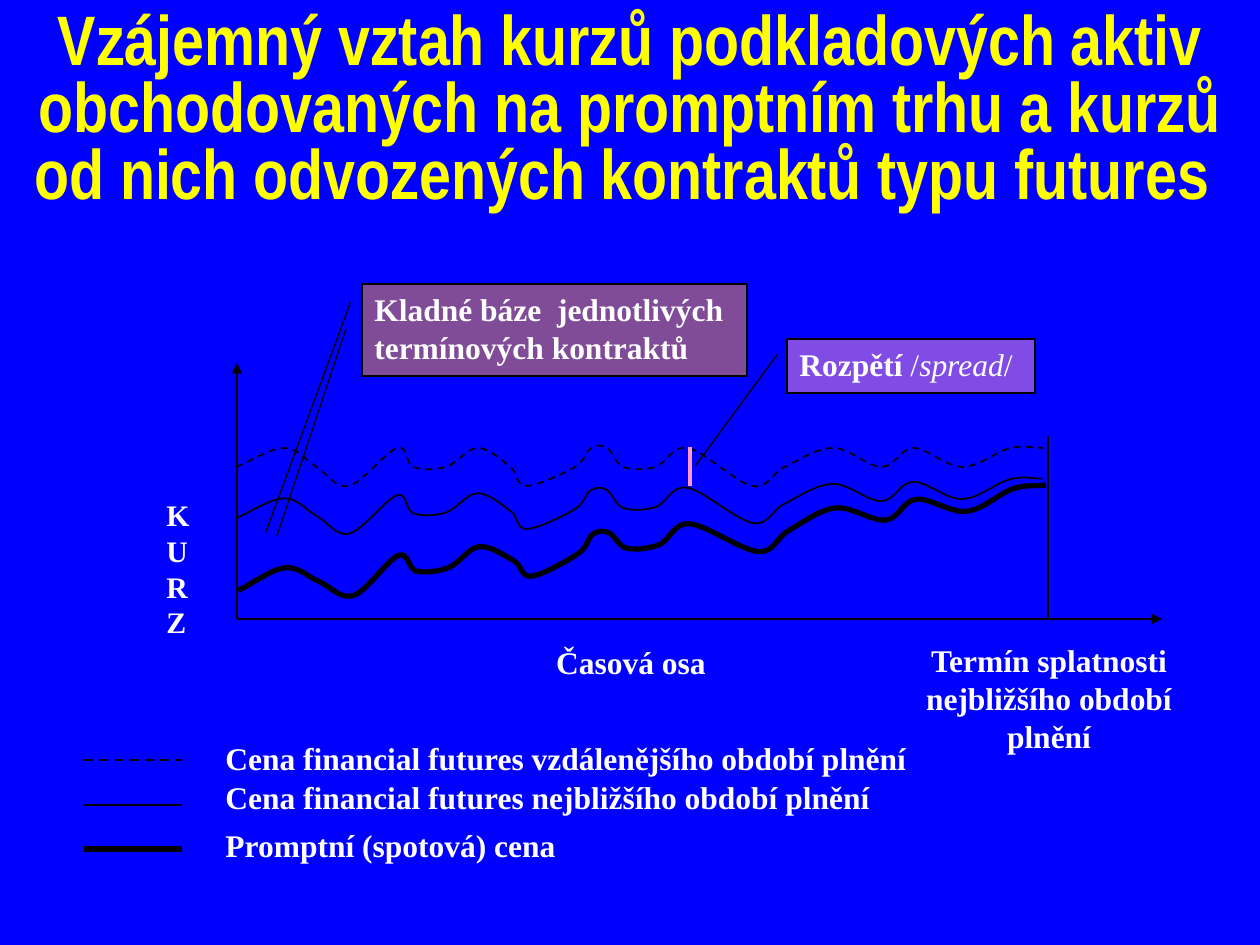
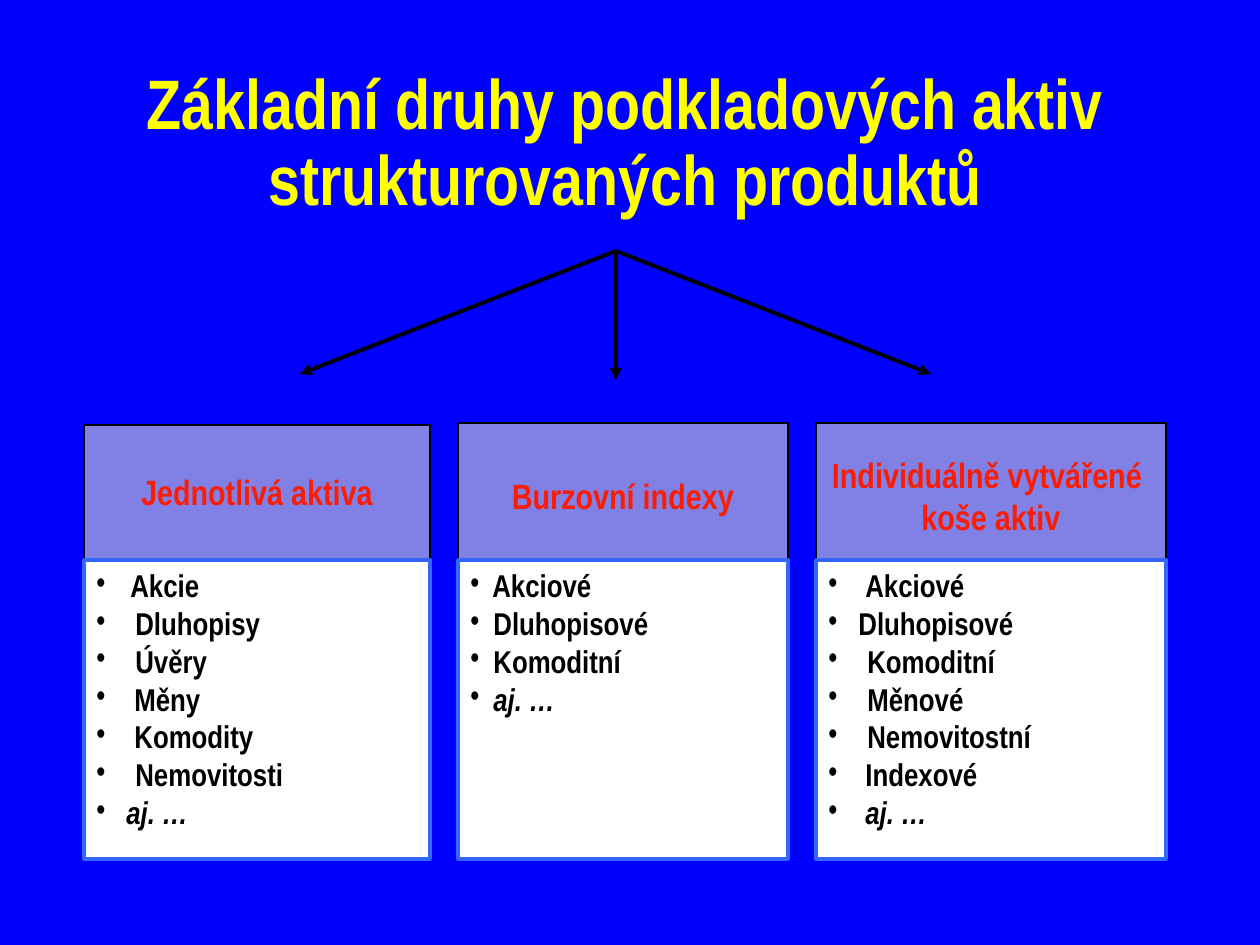
from dataclasses import dataclass

from lxml.etree import SubElement
from pptx import Presentation
from pptx.dml.color import RGBColor
from pptx.enum.dml import MSO_LINE
from pptx.enum.shapes import MSO_CONNECTOR, MSO_SHAPE
from pptx.enum.text import MSO_ANCHOR, MSO_AUTO_SIZE, PP_ALIGN
from pptx.oxml.ns import qn
from pptx.util import Emu, Inches, Pt

PX = Inches(1) / 126


@dataclass(frozen=True)
class Style:
    font: str
    size: int
    color: str
    bold: bool = True


class Theme:
    back, ink, white = "0000FF", "000000", "FFFFFF"
    spread, basis, panel, frame = "FF99CC", "FF9933", "FFFFCC", "3366FF"
    title = Style("Arial Narrow", 40, "FFFF00")
    label = Style("Times New Roman", 18, white)
    axis = Style("Times New Roman", 17, white)
    heading = Style("Arial Narrow", 20, "FC1C04")
    item = Style("Arial Narrow", 18, ink)


# ---- Content: boxes are left, top, width, height in px ----
RATES_TITLE = ["Vzájemný vztah kurzů podkladových aktiv obchodovaných na promptním trhu "
               "a kurzů od nich odvozených kontraktů typu futures "]
ASSETS_TITLE = ["Základní druhy podkladových aktiv", "strukturovaných produktů"]

# Wave knots: (steps along the time axis, level: 1 high, 0 middle, -1 low)
WAVE = [(0, 0), (3, 1), (5, 0), (7, -1), (10, 1), (11, 0), (13, 0), (15, 1),
        (17, 0), (18, -1), (21, 0), (22, 1), (23, 1), (24, 0), (26, 0), (28, 1),
        (32, -1), (34, 0), (37, 1), (40, 0), (42, 1), (45, 0), (48, 1), (50, 1)]
WAVE_STEP, WAVE_LEVEL = 16, 19

# Name, wave box, rotation, curve width, legend width, dash, legend line y
PRICES = [
    ("Cena financial futures vzdálenějšího období plnění",
     (236, 448, 807, 38), 0, 1, 1.25, MSO_LINE.DASH, 760),
    ("Cena financial futures nejbližšího období plnění",
     (236, 489, 807, 37), -1.5, 1, 1, None, 805),
    ("Promptní (spotová) cena",
     (236, 529, 814, 35), -6.2, 3, 3, None, 849),
]
LEGEND_X = (84, 182)
LEGEND_BOX = (213, 737, 735, 132)

AXIS_LETTERS = ((154, 466, 66, 170), list("KURZ"))
CAPTIONS = [
    ((913, 635, 272, 127), ["Termín splatnosti nejbližšího období", "plnění"]),
    ((525, 637, 212, 57), ["Časová osa"]),
]
CALLOUTS = [
    ((787, 339, 248, 54), Theme.spread, (0.29, -0.04, 2.35, -0.37),
     [[("Rozpětí", True, False), (" /", False, False),
       ("spread", False, True), ("/", False, False)]]),
    ((362, 284, 385, 92), Theme.basis, (0.2, -0.03, 2.7, -0.25),
     ["Kladné báze  jednotlivých termínových kontraktů"]),
]
ORIGIN, AXIS_TOP, AXIS_RIGHT = (237, 619), (237, 363), (1162, 619)

OTHERS = [("aj. …", True, True)]
# Left, width, top, heading offset, heading, items with their indents
GROUPS = [
    (84, 346, 425, 46, ["Jednotlivá aktiva"],
     [("Akcie", 34), ("Dluhopisy", 39), ("Úvěry", 39), ("Měny", 38),
      ("Komodity", 38), ("Nemovitosti", 39), (OTHERS, 30)]),
    (458, 330, 423, 51, ["Burzovní indexy"],
     [("Akciové", 22), ("Dluhopisové", 23), ("Komoditní", 23), (OTHERS, 23)]),
    (816, 350, 423, 30, ["Individuálně vytvářené ", "koše aktiv"],
     [("Akciové", 37), ("Dluhopisové", 30), ("Komoditní", 39), ("Měnové", 39),
      ("Nemovitostní", 39), ("Indexové", 37), (OTHERS, 37)]),
]
LIST_TOP, GROUP_BOTTOM = 560, 859
ARROW_START, ARROW_ENDS = (616, 251), [(300, 374), (931, 374), (616, 380)]


# ---- Helpers ----
def px(*values):
    return [Emu(round(v * PX)) for v in values]


def rgb(color):
    return RGBColor.from_string(color)


def write(sp, paragraphs, style, align=PP_ALIGN.LEFT, anchor=MSO_ANCHOR.TOP,
          spacing=None, top=None):
    """Fill a shape; a paragraph is a string or a list of (text, bold, italic)."""
    tf = sp.text_frame
    tf.word_wrap, tf.auto_size, tf.vertical_anchor = True, MSO_AUTO_SIZE.NONE, anchor
    if top is not None:
        tf.margin_top = px(top)[0]
    for i, content in enumerate(paragraphs):
        p = tf.add_paragraph() if i else tf.paragraphs[0]
        p.alignment = align
        if spacing:
            p.line_spacing = spacing
        p.font.name, p.font.size = style.font, Pt(style.size)
        p.font.bold, p.font.color.rgb = style.bold, rgb(style.color)
        if isinstance(content, str):
            p.add_run().text = content
        else:
            for text, bold, italic in content:
                r = p.add_run()
                r.text, r.font.bold, r.font.italic = text, bold, italic
    return tf


def add_bullet(p, indent):
    pPr = p._p.get_or_add_pPr()
    pPr.set("marL", str(px(indent)[0]))
    pPr.set("indent", str(-px(indent)[0]))
    for tag, attributes in (("a:buFont", {"typeface": Theme.item.font}),
                            ("a:buChar", {"char": "•"})):
        mark = pPr.makeelement(qn(tag), attributes)
        pPr.insert_element_before(mark, "a:tabLst", "a:defRPr", "a:extLst")


def add_text(s, box, paragraphs, style, **options):
    return write(s.shapes.add_textbox(*px(*box)), paragraphs, style, **options)


def add_box(s, kind, box, fill, line, width, alpha=None):
    sp = s.shapes.add_shape(kind, *px(*box))
    sp.shadow.inherit = False
    sp.fill.solid()
    sp.fill.fore_color.rgb = rgb(fill)
    if alpha:
        clr = sp._element.spPr.find(f"{qn('a:solidFill')}/{qn('a:srgbClr')}")
        SubElement(clr, qn("a:alpha"), val=str(alpha * 1000))
    sp.line.color.rgb, sp.line.width = rgb(line), Pt(width)
    return sp


def add_line(s, start, end, width=1, color=Theme.ink, dash=None, arrow=False):
    c = s.shapes.add_connector(MSO_CONNECTOR.STRAIGHT, *px(*start, *end))
    c.line.color.rgb, c.line.width = rgb(color), Pt(width)
    if dash:
        c.line.dash_style = dash
    if arrow:
        SubElement(c.line._get_or_add_ln(), qn("a:tailEnd"), type="triangle")
    SubElement(c._element.spPr, qn("a:effectLst"))


def smooth(sp):
    """Turn the straight segments of a freeform into Bezier curves through its knots."""
    knots = [(int(pt.get("x")), int(pt.get("y"))) for pt in sp._element.iter(qn("a:pt"))]

    def mirror(end, inner):
        return tuple(2 * e - i for e, i in zip(end, inner))

    padded = [mirror(knots[0], knots[1]), *knots, mirror(knots[-1], knots[-2])]
    segments = list(sp._element.iter(qn("a:lnTo")))
    for segment, a, b, c, d in zip(segments, padded, padded[1:], padded[2:], padded[3:]):
        leave = [q + (r - p) / 6 for p, q, r in zip(a, b, c)]
        arrive = [r - (u - q) / 6 for q, r, u in zip(b, c, d)]
        curve = segment.makeelement(qn("a:cubicBezTo"), {})
        for x, y in (leave, arrive, c):
            SubElement(curve, qn("a:pt"), x=str(round(x)), y=str(round(y)))
        segment.getparent().replace(segment, curve)


def add_wave(s, box, rotation, width, dash):
    points = [px(n * WAVE_STEP, -level * WAVE_LEVEL) for n, level in WAVE]
    builder = s.shapes.build_freeform(*points[0])
    builder.add_line_segments(points[1:], close=False)
    sp = builder.convert_to_shape()
    smooth(sp)
    sp.left, sp.top, sp.width, sp.height = px(*box)
    sp.rotation = rotation
    sp.shadow.inherit = False
    sp.fill.background()
    sp.line.color.rgb, sp.line.width = rgb(Theme.ink), Pt(width)
    if dash:
        sp.line.dash_style = dash


def add_slide(prs, title, box, spacing):
    s = prs.slides.add_slide(prs.slide_layouts[5])
    sp = s.shapes.title
    sp.left, sp.top, sp.width, sp.height = px(*box)
    write(sp, title, Theme.title, PP_ALIGN.CENTER, MSO_ANCHOR.MIDDLE, spacing)
    return s


# ---- Slides ----
def build_rates(prs):
    s = add_slide(prs, RATES_TITLE, (0, 0, 1260, 224), 0.8)

    # Legend
    tf = add_text(s, LEGEND_BOX, [price[0] for price in PRICES], Theme.label, spacing=0.9)
    for p in tf.paragraphs[1:]:
        p.space_before, p.space_after = Pt(3), Pt(5)

    # Axes and maturity line
    add_line(s, ORIGIN, AXIS_TOP, arrow=True)
    add_line(s, ORIGIN, AXIS_RIGHT, arrow=True)
    add_line(s, (1048, 436), (1048, 619))

    # Price curves with their legend lines
    for _, box, rotation, width, legend_width, dash, y in PRICES:
        add_wave(s, box, rotation, width, dash)
        add_line(s, (LEGEND_X[0], y), (LEGEND_X[1], y), legend_width, dash=dash)

    # Labels
    add_text(s, *AXIS_LETTERS, Theme.axis, top=31)
    for box, lines in CAPTIONS:
        add_text(s, box, lines, Theme.label, align=PP_ALIGN.CENTER)

    # Callouts, spread mark and second pointer
    for box, fill, adjustments, lines in CALLOUTS:
        sp = add_box(s, MSO_SHAPE.LINE_CALLOUT_1, box, fill, Theme.ink, 0.75, alpha=50)
        for i, value in enumerate(adjustments):
            sp.adjustments[i] = value
        write(sp, lines, Theme.label)
    add_line(s, (690, 447), (690, 486), 2.25, Theme.spread)
    add_line(s, (277, 536), (346, 329), 0.75)


def build_assets(prs):
    s = add_slide(prs, ASSETS_TITLE, (124, 46, 1002, 198), 0.9)
    for end in ARROW_ENDS:
        add_line(s, ARROW_START, end, 2.25, arrow=True)

    # Heading panel with its list in front
    for left, width, top, offset, heading, items in GROUPS:
        panel = add_box(s, MSO_SHAPE.RECTANGLE, (left, top, width, GROUP_BOTTOM - top),
                        Theme.panel, Theme.ink, 1.5, alpha=50)
        write(panel, heading, Theme.heading, PP_ALIGN.CENTER, top=offset)
        card = add_box(s, MSO_SHAPE.RECTANGLE, (left, LIST_TOP, width, GROUP_BOTTOM - LIST_TOP),
                       Theme.white, Theme.frame, 2)
        tf = write(card, [item for item, _ in items], Theme.item)
        for p, (_, indent) in zip(tf.paragraphs, items):
            add_bullet(p, indent)


def main():
    prs = Presentation()
    prs.slide_width, prs.slide_height = Inches(10), Inches(7.5)
    fill = prs.slide_master.background.fill
    fill.solid()
    fill.fore_color.rgb = rgb(Theme.back)
    build_rates(prs)
    build_assets(prs)
    prs.save("out.pptx")


if __name__ == "__main__":
    main()
